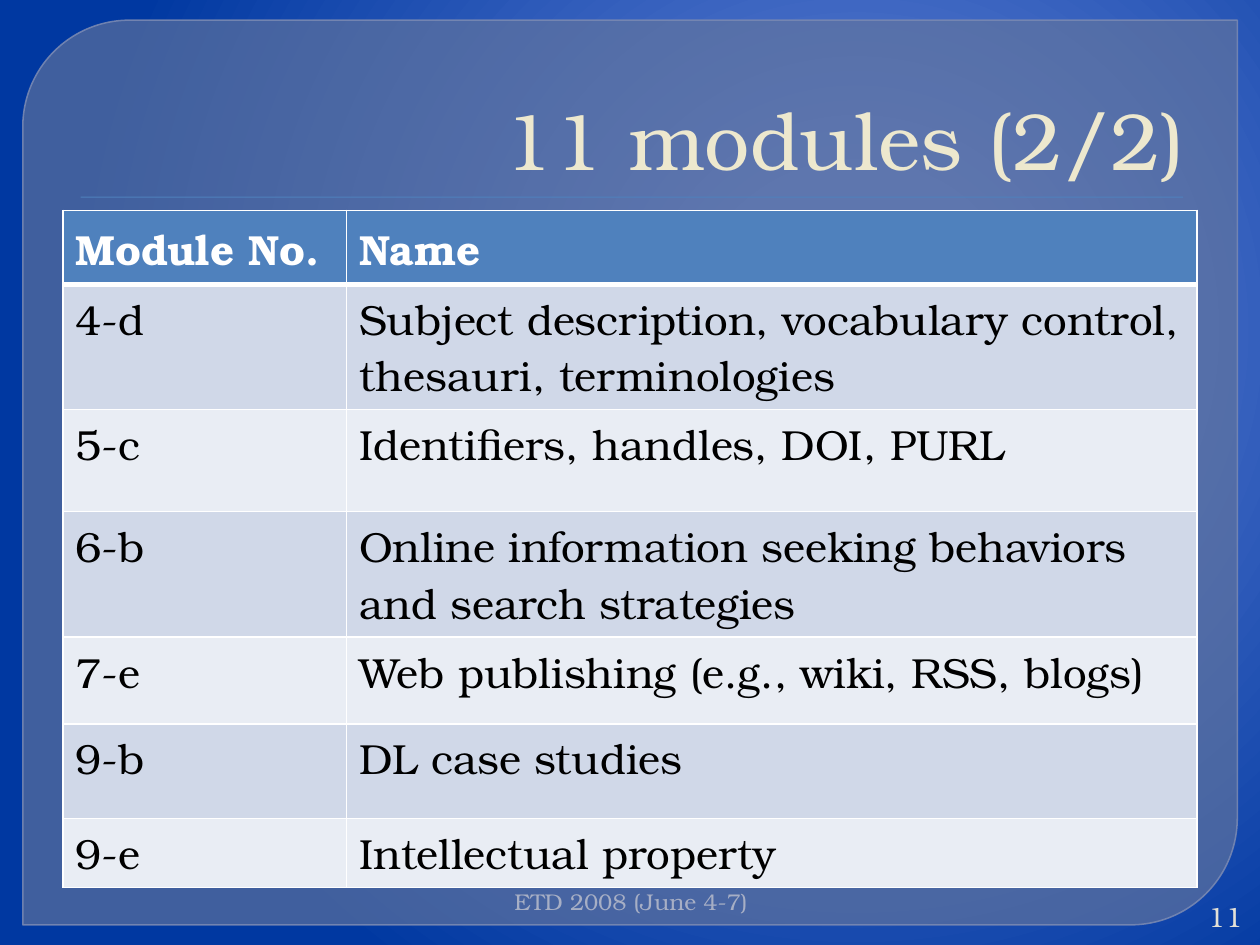
from pptx import Presentation
from pptx.dml.color import RGBColor
from pptx.enum.shapes import MSO_SHAPE as Shape
from pptx.enum.text import MSO_ANCHOR as Anchor, MSO_AUTO_SIZE as AutoSize, PP_ALIGN as Align
from pptx.oxml import parse_xml
from pptx.oxml.ns import nsdecls, qn
from pptx.util import Pt
from lxml.etree import SubElement

FONT = "TeX Gyre Bonum"
C = {
    "panel": "63759D", "edge": "7989B3", "accent": "4F81BD", "title": "EDE8CE",
    "footer": "A7AFC5", "number": "E3E1D7", "white": "FFFFFF", "black": "000000",
    "odd": "D0D8E8", "even": "E9EDF4",
}
BACKGROUND = [(0, "6182D6"), (20, "5578CE"), (100, "0038A1")]
TITLE = "11 modules (2/2)"
MODULES = [
    ("Module No.", "Name"),
    ("4-d", "Subject description, vocabulary control, thesauri, terminologies"),
    ("5-c", "Identifiers, handles, DOI, PURL"),
    ("6-b", "Online information seeking behaviors and search strategies"),
    ("7-e", "Web publishing (e.g., wiki, RSS, blogs)"),
    ("9-b", "DL case studies"),
    ("9-e", "Intellectual property"),
]
COL_WIDTHS = [162, 486]
ROW_HEIGHTS = [41.8, 71.2, 58.3, 71, 49.7, 54.3, 38.9]
# text, box, size, colour, anchor
LABELS = [
    ("ETD 2008 (June 4-7)", (102.2, 504, 332, 21.6), 13, "footer", Anchor.TOP),
    ("11", (680.4, 512.6, 36.7, 21.6), 16, "number", Anchor.MIDDLE),
]


def rgb(name):
    return RGBColor.from_string(C[name])


def box(*lengths):
    return [Pt(v) for v in lengths]


def write(tf, text, size, color, align=Align.LEFT, bold=False):
    p = tf.paragraphs[0]
    p.alignment = align
    r = p.add_run()
    r.text = text
    r.font.name, r.font.size, r.font.bold = FONT, Pt(size), bold
    r.font.color.rgb = rgb(color)


def set_alpha(fill_parent, percent):
    color = fill_parent.find(qn("a:solidFill"))[0]
    SubElement(color, qn("a:alpha"), val=str(percent * 1000))


def set_background(s):
    """Radial gradient centred right of the middle."""
    stops = "".join(f'<a:gs pos="{pos * 1000}"><a:srgbClr val="{c}"/></a:gs>'
                    for pos, c in BACKGROUND)
    s.element.cSld.insert(0, parse_xml(
        f'<p:bg {nsdecls("p", "a")}><p:bgPr><a:gradFill rotWithShape="1">'
        f'<a:gsLst>{stops}</a:gsLst><a:path path="circle">'
        '<a:fillToRect l="68000" t="35000" r="32000" b="65000"/></a:path>'
        '</a:gradFill><a:effectLst/></p:bgPr></p:bg>'))


def add_filled(s, kind, lengths, color):
    sp = s.shapes.add_shape(kind, *box(*lengths))
    sp.shadow.inherit = False
    sp.fill.solid()
    sp.fill.fore_color.rgb = rgb(color)
    sp.line.fill.background()
    return sp


def set_borders(cell, widths):
    """White cell borders; widths are left, right, top, bottom."""
    tc_pr = cell._tc.get_or_add_tcPr()
    for i, (side, width) in enumerate(zip("LRTB", widths)):
        tc_pr.insert(i, parse_xml(
            f'<a:ln{side} {nsdecls("a")} w="{Pt(width)}"><a:solidFill>'
            f'<a:srgbClr val="{C["white"]}"/></a:solidFill></a:ln{side}>'))


def add_modules(s):
    frame = s.shapes.add_table(len(MODULES), len(COL_WIDTHS),
                               *box(36, 120.2, sum(COL_WIDTHS), sum(ROW_HEIGHTS)))
    table = frame.table
    for column, width in zip(table.columns, COL_WIDTHS):
        column.width = Pt(width)
    for i, (texts, height) in enumerate(zip(MODULES, ROW_HEIGHTS)):
        table.rows[i].height = Pt(height)
        header = i == 0
        fill = "accent" if header else "odd" if i % 2 else "even"
        for cell, text in zip(table.rows[i].cells, texts):
            write(cell.text_frame, text, 24, "white" if header else "black", bold=header)
            cell.fill.solid()
            cell.fill.fore_color.rgb = rgb(fill)
            set_borders(cell, (1, 1, 3 if i == 1 else 1, 3 if header else 1))


def main():
    prs = Presentation()
    prs.slide_width, prs.slide_height = Pt(720), Pt(540)
    s = prs.slides.add_slide(prs.slide_layouts[5])
    set_background(s)

    panel = add_filled(s, Shape.ROUND_2_DIAG_RECTANGLE, (13, 11.5, 694, 517), "panel")
    panel.adjustments[0], panel.adjustments[1] = 0.118, 0
    panel.line.color.rgb = rgb("edge")
    panel.line.width = Pt(0.87)
    sp_pr = panel._element.spPr
    set_alpha(sp_pr, 65)
    set_alpha(sp_pr.find(qn("a:ln")), 88)
    add_filled(s, Shape.RECTANGLE, (46.1, 112.3, 630, 0.7), "accent")

    title = s.shapes.title
    s.shapes._spTree.append(title._element)  # in front of the panel
    title.left, title.top, title.width, title.height = box(36, 20.2, 648, 90)
    tf = title.text_frame
    tf.auto_size, tf.vertical_anchor = AutoSize.NONE, Anchor.BOTTOM
    write(tf, TITLE, 46, "title", Align.RIGHT)

    add_modules(s)

    for text, lengths, size, color, anchor in LABELS:
        tf = s.shapes.add_textbox(*box(*lengths)).text_frame
        tf.word_wrap, tf.vertical_anchor = True, anchor
        write(tf, text, size, color, Align.RIGHT)

    prs.save("out.pptx")


if __name__ == "__main__":
    main()
